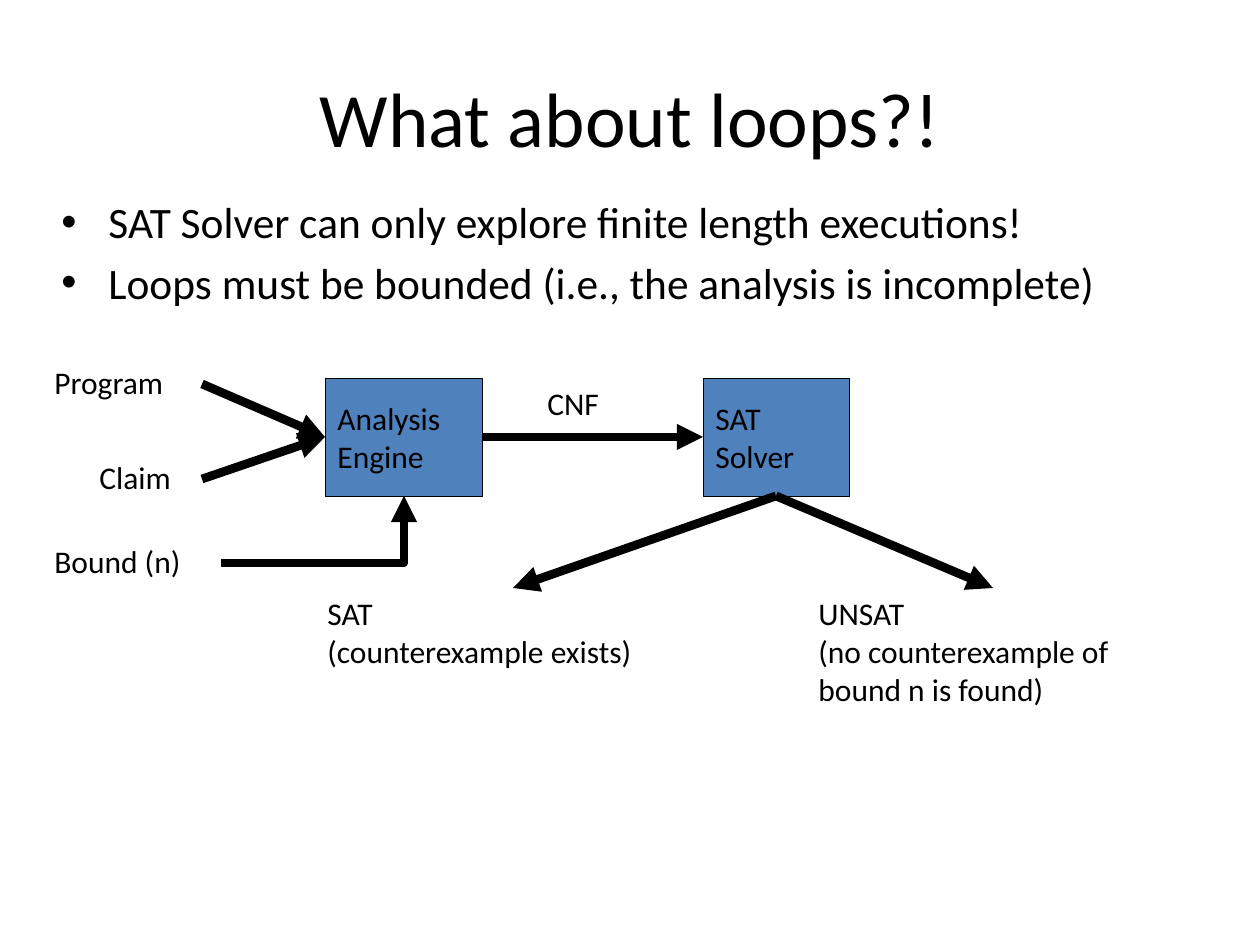
from lxml import etree
from pptx import Presentation
from pptx.dml.color import RGBColor
from pptx.enum.shapes import MSO_CONNECTOR, MSO_SHAPE
from pptx.enum.text import MSO_ANCHOR, PP_ALIGN
from pptx.oxml.ns import qn
from pptx.util import Inches, Pt

STRAIGHT, ELBOW = MSO_CONNECTOR.STRAIGHT, MSO_CONNECTOR.ELBOW
RECTANGLE = MSO_SHAPE.RECTANGLE
TOP, MIDDLE = MSO_ANCHOR.TOP, MSO_ANCHOR.MIDDLE
LEFT, CENTER = PP_ALIGN.LEFT, PP_ALIGN.CENTER
LEFT_SIDE, BOTTOM_SIDE, RIGHT_SIDE = 1, 2, 3
BLACK = RGBColor(0x00, 0x00, 0x00)
BLUE = RGBColor(0x4F, 0x81, 0xBD)
FONT = "Calibri"
SCALE = Inches(1) / 126


def px(*lengths):
    return [round(length * SCALE) for length in lengths]


class FlowSlide:
    """Holds the style and the current slide, and draws each kind of element."""

    def __init__(self, slide):
        self.slide = slide
        self.shapes = slide.shapes

    def set_text(self, shape, lines, size, anchor, align):
        frame = shape.text_frame
        frame.word_wrap = True
        frame.vertical_anchor = anchor
        frame.text = "\n".join(lines)
        for paragraph in frame.paragraphs:
            paragraph.alignment = align
            paragraph.font.name = FONT
            paragraph.font.size = Pt(size)
            paragraph.font.color.rgb = BLACK
        return frame

    def text(self, box, *lines, size=18, anchor=TOP, align=LEFT):
        return self.set_text(self.shapes.add_textbox(*px(*box)), lines, size, anchor, align)

    def bullets(self, box, *lines, size, indent):
        for paragraph in self.text(box, *lines, size=size).paragraphs:
            paragraph.space_before = Pt(size * 0.2)
            properties = paragraph._p.get_or_add_pPr()
            properties.set("marL", str(px(indent)[0]))
            properties.set("indent", str(px(-indent)[0]))
            bullet_font = etree.Element(qn("a:buFont"), typeface="Arial")
            bullet = etree.Element(qn("a:buChar"), char="•")
            default_font = properties.find(qn("a:defRPr"))
            for part in (bullet_font, bullet):
                if default_font is None:
                    properties.append(part)
                else:
                    default_font.addprevious(part)

    def stage(self, box, *lines):
        shape = self.shapes.add_shape(RECTANGLE, *px(*box))
        shape.shadow.inherit = False
        shape.fill.solid()
        shape.fill.fore_color.rgb = BLUE
        shape.line.color.rgb = BLACK
        shape.line.width = Pt(0.5)
        self.set_text(shape, lines, 18, MIDDLE, LEFT)
        return shape

    def arrow(self, start, end, source=None, target=None, kind=STRAIGHT):
        connector = self.shapes.add_connector(kind, *px(*start, *end))
        if source:
            connector.begin_connect(*source)
        if target:
            connector.end_connect(*target)
        connector.line.color.rgb = BLACK
        connector.line.width = Pt(5)
        properties = connector._element.spPr
        line = properties.find(qn("a:ln"))
        etree.SubElement(line, qn("a:tailEnd"), type="triangle")
        etree.SubElement(properties, qn("a:effectLst"))
        if kind == ELBOW:
            properties.find(qn("a:prstGeom")).set("prst", "bentConnector2")


def main():
    deck = Presentation()
    deck.slide_width, deck.slide_height = px(1260, 945)
    flow = FlowSlide(deck.slides.add_slide(deck.slide_layouts[6]))

    flow.text((63, 38, 1134, 157), "What about loops?!", size=44, anchor=MIDDLE, align=CENTER)
    flow.bullets(
        (49, 189, 1103, 136),
        "SAT Solver can only explore finite length executions!",
        "Loops must be bounded (i.e., the analysis is incomplete)",
        size=24.8,
        indent=47,
    )

    flow.text((42, 357, 160, 54), "Program")
    flow.text((87, 452, 115, 54), "Claim")
    flow.text((42, 536, 179, 54), "Bound (n)")
    flow.text((535, 378, 97, 54), "CNF")
    flow.text((315, 588, 397, 117), "SAT", "(counterexample exists)")
    flow.text((806, 588, 373, 180), "UNSAT", "(no counterexample of", "bound n is found)")

    engine = flow.stage((325, 378, 157, 118), "Analysis", "Engine")
    solver = flow.stage((703, 378, 146, 118), "SAT", "Solver")

    engine_entry, solver_exit = (325, 437), (776, 496)
    for input_y in (384, 479):
        flow.arrow((202, input_y), engine_entry, target=(engine, LEFT_SIDE))
    flow.arrow((482, 437), (703, 437), (engine, RIGHT_SIDE), (solver, LEFT_SIDE))
    for result_x in (513, 993):
        flow.arrow(solver_exit, (result_x, 588), source=(solver, BOTTOM_SIDE))
    flow.arrow((221, 563), (404, 496), kind=ELBOW)

    deck.save("out.pptx")


if __name__ == "__main__":
    main()
